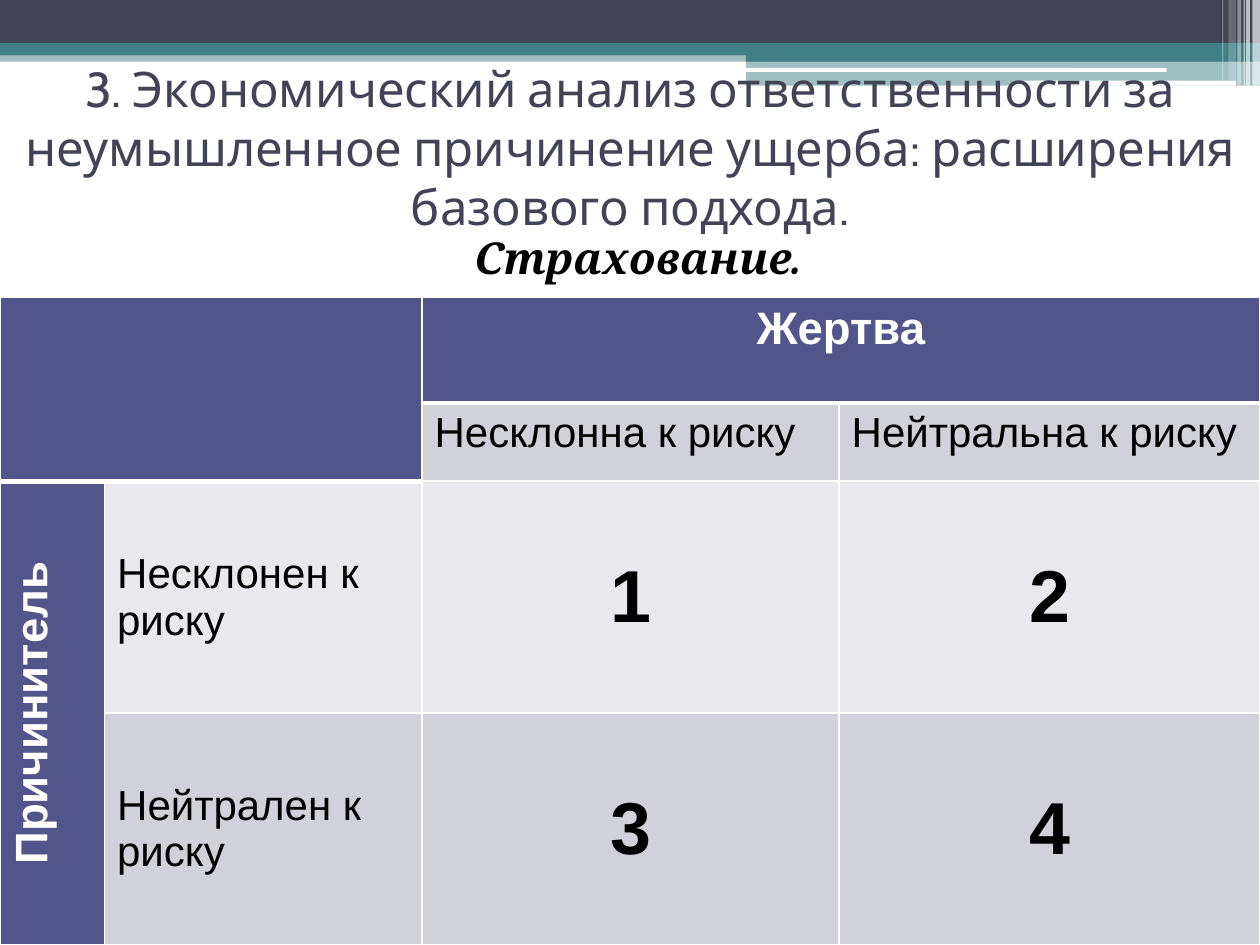
from typing import NamedTuple
from pptx import Presentation, util as u
from pptx.dml.color import RGBColor
from pptx.enum import shapes, text
from pptx.oxml import parse_xml
from pptx.oxml.ns import nsdecls, qn

WIDE, HIGH = 10, 7.5
TEAL, DARK, WHITE, BLACK = "438086", "424456", "FFFFFF", "000000"
HEAD, PALE, GREY = "53548A", "E9E9ED", "D1D1DA"
MID, TOP = text.MSO_ANCHOR.MIDDLE, text.MSO_ANCHOR.TOP
LEFT, CENTRE = text.PP_ALIGN.LEFT, text.PP_ALIGN.CENTER


class Bar(NamedTuple):
    x: float
    y: float
    w: float
    h: float
    hue: str
    alpha: int = 100
    round: bool = False


class Font(NamedTuple):
    size: int
    hue: str
    face: str = "Arial"
    bold: bool = False
    slant: bool = False


class Box(NamedTuple):
    row: int
    col: int
    words: str
    font: Font
    fill: str
    align: text.PP_ALIGN = LEFT
    anchor: text.MSO_ANCHOR = TOP
    rows: int = 1
    cols: int = 1
    turn: bool = False


LABEL = Font(24, BLACK)
NAME = Font(26, WHITE, bold=True)
DIGIT = Font(42, BLACK, bold=True)
COLS = (0.83, 2.52, 3.31, 3.34)
ROWS = (0.84, 0.62, 1.84, 1.84)

BARS = [
    Bar(0, 0.4, WIDE, 0.09, TEAL, 50),
    Bar(0, 0, WIDE, 0.34, DARK),
    Bar(0, 0.34, WIDE, 0.1, TEAL),
    Bar(5.92, 0.39, 4.08, 0.1, TEAL),
    Bar(5.92, 0.48, 4.08, 0.2, TEAL, 50),
    Bar(5.91, 0.54, 3.35, 0.03, WHITE, round=True),
    Bar(8.06, 0.64, 1.75, 0.04, WHITE, round=True),
] + [Bar(x, 0, w, h, WHITE, alpha) for x, w, h, alpha in (
    (9.94, 0.06, 0.68, 65), (9.89, 0.03, 0.68, 65), (9.87, 0.01, 0.68, 60),
    (9.82, 0.03, 0.68, 40), (9.75, 0.06, 0.64, 20), (9.7, 0.01, 0.64, 30))]

BOXES = [
    Box(0, 0, "", NAME, HEAD, rows=2, cols=2),
    Box(0, 2, "Жертва", NAME, HEAD, CENTRE, cols=2),
    Box(1, 2, "Несклонна к риску", LABEL, GREY),
    Box(1, 3, "Нейтральна к риску", LABEL, GREY),
    Box(2, 0, "Причинитель", NAME, HEAD, CENTRE, rows=2, turn=True),
    Box(2, 1, "Несклонен к риску", LABEL, PALE, LEFT, MID),
    Box(3, 1, "Нейтрален к риску", LABEL, GREY, LEFT, MID),
] + [Box(2 + i // 2, 2 + i % 2, str(i + 1), DIGIT, (PALE, GREY)[i // 2],
         CENTRE, MID) for i in range(4)]


def paint(fill, hue: str) -> None:
    fill.solid()
    fill.fore_color.rgb = RGBColor.from_string(hue)


def write(para, words: str, font: Font, align: text.PP_ALIGN) -> None:
    para.alignment = align
    run = para.add_run()
    run.text = words
    run.font.size = u.Pt(font.size)
    run.font.name = font.face
    run.font.bold, run.font.italic = font.bold, font.slant
    run.font.color.rgb = RGBColor.from_string(font.hue)


def draw(slide, bar: Bar) -> None:
    kind = shapes.MSO_SHAPE.ROUNDED_RECTANGLE if bar.round else shapes.MSO_SHAPE.RECTANGLE
    shape = slide.shapes.add_shape(kind, *map(u.Inches, bar[:4]))
    shape.shadow.inherit = False
    shape.line.fill.background()
    paint(shape.fill, bar.hue)
    if bar.alpha < 100:
        tint = shape.fill._xPr.find(".//" + qn("a:srgbClr"))
        tint.append(parse_xml(f'<a:alpha {nsdecls("a")} val="{bar.alpha * 1000}"/>'))


def place(slide, holder, top: float, high: float, words: str, font: Font, anchor):
    holder.left, holder.top = 0, u.Inches(top)
    holder.width, holder.height = u.Inches(WIDE), u.Inches(high)
    frame = holder.text_frame
    frame.word_wrap = True
    frame.auto_size = text.MSO_AUTO_SIZE.NONE
    frame.vertical_anchor = anchor
    para = frame.paragraphs[0]
    para.space_before = u.Pt(0)
    write(para, words, font, CENTRE)
    slide.shapes._spTree.append(holder._element)
    return para


def edge(cell, row: int, col: int) -> None:
    thick = 1 if col >= 2 else 2
    props = cell._tc.get_or_add_tcPr()
    wide = {"lnL": 1, "lnR": 1, "lnT": 3 if row == thick else 1,
            "lnB": 3 if row + 1 == thick else 1}
    for spot, (tag, size) in enumerate(wide.items()):
        props.insert(spot, parse_xml(
            f'<a:{tag} {nsdecls("a")} w="{u.Pt(size)}"><a:solidFill>'
            f'<a:srgbClr val="{WHITE}"/></a:solidFill></a:{tag}>'))


def fill_box(table, box: Box) -> None:
    cell = table.cell(box.row, box.col)
    end = box.row + box.rows, box.col + box.cols
    if box.rows * box.cols > 1:
        cell.merge(table.cell(end[0] - 1, end[1] - 1))
    for row in range(box.row, end[0]):
        for col in range(box.col, end[1]):
            part = table.cell(row, col)
            paint(part.fill, box.fill)
            edge(part, row, col)
    cell.vertical_anchor = box.anchor
    if box.turn:
        cell._tc.get_or_add_tcPr().set("vert", "vert270")
    if box.words:
        write(cell.text_frame.paragraphs[0], box.words, box.font, box.align)


def grid(slide) -> None:
    high = sum(ROWS)
    table = slide.shapes.add_table(
        len(ROWS), len(COLS), 0, u.Inches(HIGH - high), u.Inches(WIDE), u.Inches(high)).table
    for col, size in zip(table.columns, COLS):
        col.width = u.Inches(size)
    for row, size in zip(table.rows, ROWS):
        row.height = u.Inches(size)
    for box in BOXES:
        fill_box(table, box)


def main() -> None:
    deck = Presentation()
    deck.slide_width, deck.slide_height = u.Inches(WIDE), u.Inches(HIGH)
    slide = deck.slides.add_slide(deck.slide_layouts[1])
    title, body = slide.placeholders
    for bar in BARS:
        draw(slide, bar)
    para = place(slide, body, 1.78, 0.47, "Страхование.",
                 Font(25, BLACK, "Cambria", True, True), TOP)
    props = para._p.get_or_add_pPr()
    props.set("marL", str(u.Inches(0.4)))
    props.set("indent", str(u.Inches(-0.28)))
    props.append(parse_xml(f'<a:buNone {nsdecls("a")}/>'))
    place(slide, title, 0.47, 1.39,
          "3. Экономический анализ ответственности за неумышленное "
          "причинение ущерба: расширения базового подхода.",
          Font(28, DARK, "Cabin"), MID)
    grid(slide)
    deck.save("out.pptx")


if __name__ == "__main__":
    main()
